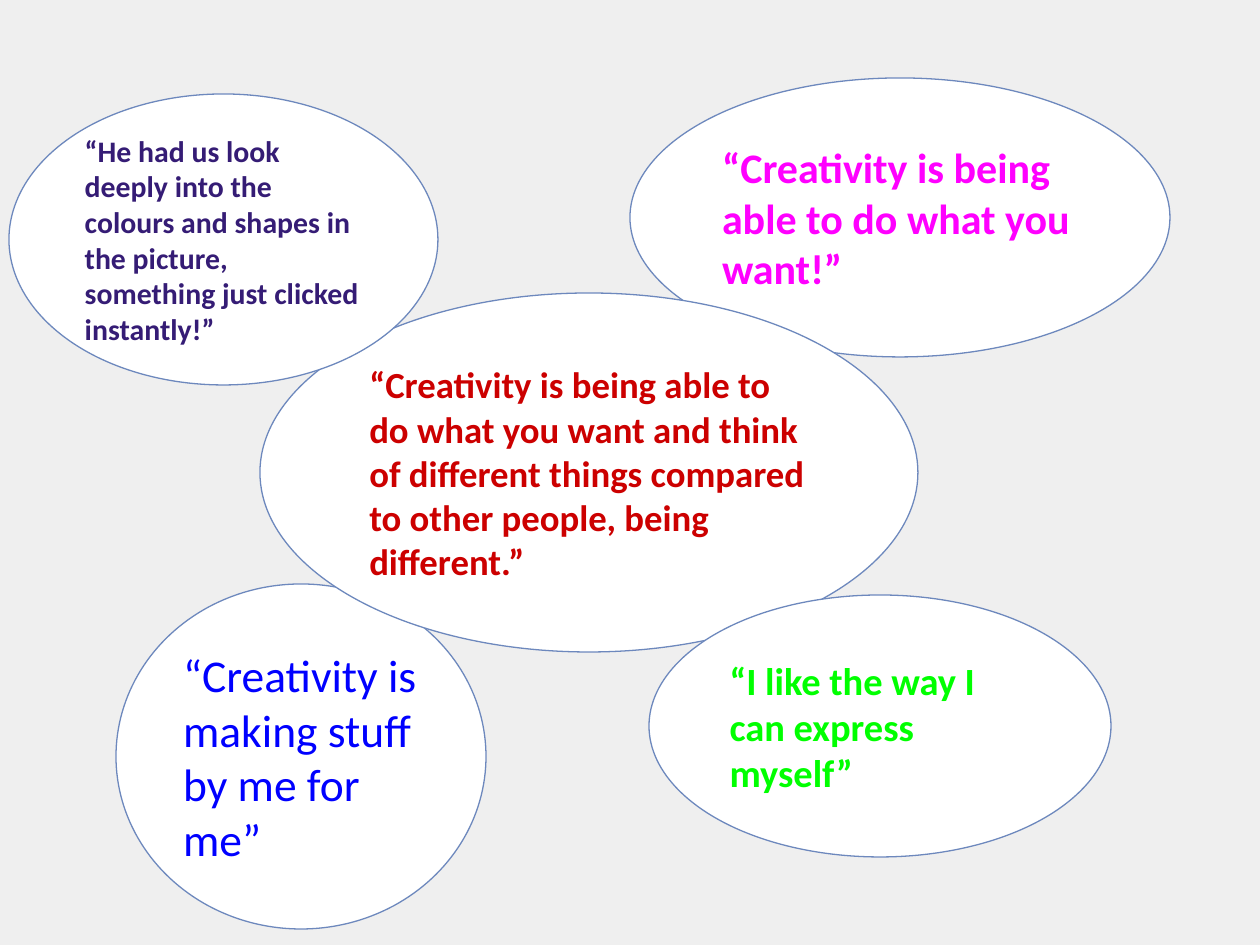
from pptx import Presentation
from pptx import util as u
from pptx.dml.color import RGBColor
from pptx.enum import shapes, text

PX = u.Inches(1) // 126
INSET = 13
QUOTES = [
    ((116, 584, 370, 345), 26, "0000FF", False,
     "“Creativity is making stuff by me for me”"),
    ((630, 78, 540, 279), 24, "FF00FF", True,
     "“Creativity is being able to do what you want!”"),
    ((260, 293, 658, 359), 21, "CC0000", True,
     "“Creativity is being able to do what you want and think of different "
     "things compared to other people, being different.”"),
    ((9, 94, 429, 291), 17, "351C75", True,
     "“He had us look deeply into the colours and shapes in the picture, "
     "something just clicked instantly!”"),
    ((649, 595, 462, 262), 22, "00FF00", True,
     "“I like the way I can express myself”"),
]


def paint(color_format, color):
    """Set a colour from a hex string."""
    color_format.rgb = RGBColor.from_string(color)


def add_quote(slide, box, size, color, bold, words):
    """Add a white outlined ellipse holding one quotation."""
    bubble = slide.shapes.add_shape(
        shapes.MSO_SHAPE.OVAL, *(length * PX for length in box))
    bubble.shadow.inherit = False
    bubble.fill.solid()
    paint(bubble.fill.fore_color, "FFFFFF")
    paint(bubble.line.color, "6D88BD")
    bubble.line.width = u.Pt(0.75)

    frame = bubble.text_frame
    frame.text = words
    frame.word_wrap = True
    frame.vertical_anchor = text.MSO_ANCHOR.MIDDLE
    frame.margin_left = frame.margin_right = INSET * PX
    frame.margin_top = frame.margin_bottom = INSET * PX
    quotation = frame.paragraphs[0]
    quotation.alignment = text.PP_ALIGN.LEFT
    font = quotation.runs[0].font
    font.name = "Calibri"
    font.size = u.Pt(size)
    font.bold = bold
    paint(font.color, color)


def main():
    """Build the slide of creativity quotations."""
    deck = Presentation()
    deck.slide_width, deck.slide_height = 1260 * PX, 945 * PX
    slide = deck.slides.add_slide(deck.slide_layouts[6])
    slide.background.fill.solid()
    paint(slide.background.fill.fore_color, "EFEFEF")
    for quote in QUOTES:
        add_quote(slide, *quote)
    deck.save("out.pptx")


if __name__ == "__main__":
    main()
